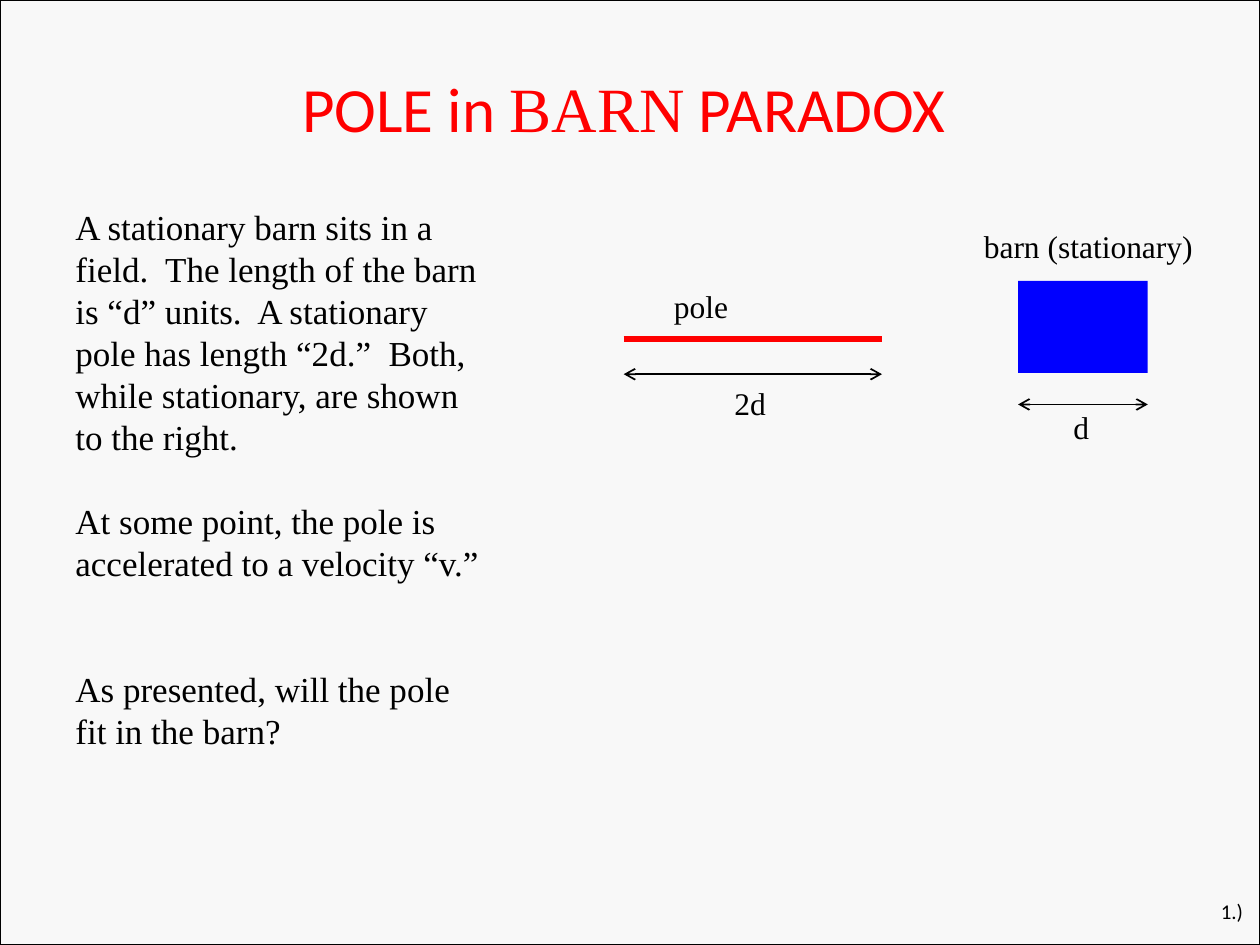
from lxml import etree
from pptx import Presentation, util as u
from pptx.dml.color import RGBColor
from pptx.enum import shapes, text
from pptx.oxml.ns import qn

COLORS = {"background": "F8F8F8", "red": "FF0000", "blue": "0000FF", "black": "000000"}
SERIF, SANS = "Times New Roman", "Calibri"


def rgb(name):
    return RGBColor.from_string(COLORS[name])


class SlideBuilder:
    def __init__(self, slide):
        self.slide = slide
        slide.background.fill.solid()
        slide.background.fill.fore_color.rgb = rgb("background")

    def text_box(self, left, top, width, height, runs, size, color="black", align=None):
        """Add one line of text given as (words, font) pairs."""
        box = self.slide.shapes.add_textbox(*map(u.Inches, (left, top, width, height)))
        box.text_frame.word_wrap = False
        paragraph = box.text_frame.paragraphs[0]
        paragraph.alignment = align
        for words, font in runs:
            run = paragraph.add_run()
            run.text = words
            self.format_run(run, font, size, color)

    def body(self, left, top, width, height, paragraphs, size, line_height):
        """Add wrapped paragraphs given as (words, blank lines before) pairs."""
        box = self.slide.shapes.add_textbox(*map(u.Inches, (left, top, width, height)))
        frame = box.text_frame
        frame.word_wrap = True
        for index, (words, gap) in enumerate(paragraphs):
            paragraph = frame.add_paragraph() if index else frame.paragraphs[0]
            paragraph.text = words
            paragraph.line_spacing = u.Pt(line_height)
            paragraph.space_before = u.Pt(gap * line_height)
            self.format_run(paragraph.runs[0], SERIF, size, "black")

    def format_run(self, run, font, size, color):
        run.font.name = font
        run.font.size = u.Pt(size)
        run.font.color.rgb = rgb(color)

    def rectangle(self, left, top, width, height, fill=None, line=None):
        shape = self.slide.shapes.add_shape(
            shapes.MSO_SHAPE.RECTANGLE, *map(u.Inches, (left, top, width, height)))
        shape.shadow.inherit = False
        if fill:
            shape.fill.solid()
            shape.fill.fore_color.rgb = rgb(fill)
        else:
            shape.fill.background()
        if line:
            shape.line.color.rgb = rgb(line)
            shape.line.width = u.Pt(1)
        else:
            shape.line.fill.background()

    def horizontal(self, left, right, y, color, width, arrows=False):
        connector = self.slide.shapes.add_connector(
            shapes.MSO_CONNECTOR.STRAIGHT, *map(u.Inches, (left, y, right, y)))
        connector.line.color.rgb = rgb(color)
        connector.line.width = u.Pt(width)
        if arrows:
            outline = connector.line._get_or_add_ln()
            for end in ("a:headEnd", "a:tailEnd"):
                etree.SubElement(outline, qn(end), type="arrow")
        etree.SubElement(connector._element.spPr, qn("a:effectLst"))


def main():
    presentation = Presentation()
    presentation.slide_width, presentation.slide_height = u.Inches(10), u.Inches(7.5)
    builder = SlideBuilder(presentation.slides.add_slide(presentation.slide_layouts[6]))

    # Title and explanation
    builder.text_box(2.27, 0.5, 5.36, 0.71,
                     [("POLE in ", SANS), ("BARN", SERIF), (" PARADOX", SANS)],
                     36, "red", text.PP_ALIGN.CENTER)
    builder.body(0.5, 1.58, 3.42, 4.14, [
        ("A stationary barn sits in a field.  The length of the barn is “d” units.  "
         "A stationary pole has length “2d.”  Both, while stationary, are shown "
         "to the right.", 0),
        ("At some point, the pole is accelerated to a velocity “v.”", 1),
        ("As presented, will the pole fit in the barn?", 2),
    ], size=20, line_height=24)

    # Slide frame and page number
    builder.rectangle(0, 0, 10, 7.5, line="black")
    builder.text_box(9.59, 7.08, 0.38, 0.3, [("1.)", SANS)], 12)

    # Barn and its length
    barn_left, barn_width = 8.08, 1.03
    builder.rectangle(barn_left, 2.23, barn_width, 0.73, fill="blue")
    builder.horizontal(barn_left, barn_left + barn_width, 3.21, "black", 1, arrows=True)

    # Pole and its length
    pole_left, pole_right = 4.95, 7
    builder.horizontal(pole_left, pole_right, 2.97, "black", 1, arrows=True)
    builder.horizontal(pole_left, pole_right, 2.69, "red", 3)

    # Labels
    for words, left, top, width in [
        ("pole", 5.25, 2.23, 0.64),
        ("2d", 5.73, 3, 0.45),
        ("d", 8.42, 3.19, 0.33),
        ("barn (stationary)", 7.71, 1.75, 1.88),
    ]:
        builder.text_box(left, top, width, 0.4, [(words, SERIF)], 18)

    presentation.save("out.pptx")


if __name__ == "__main__":
    main()
